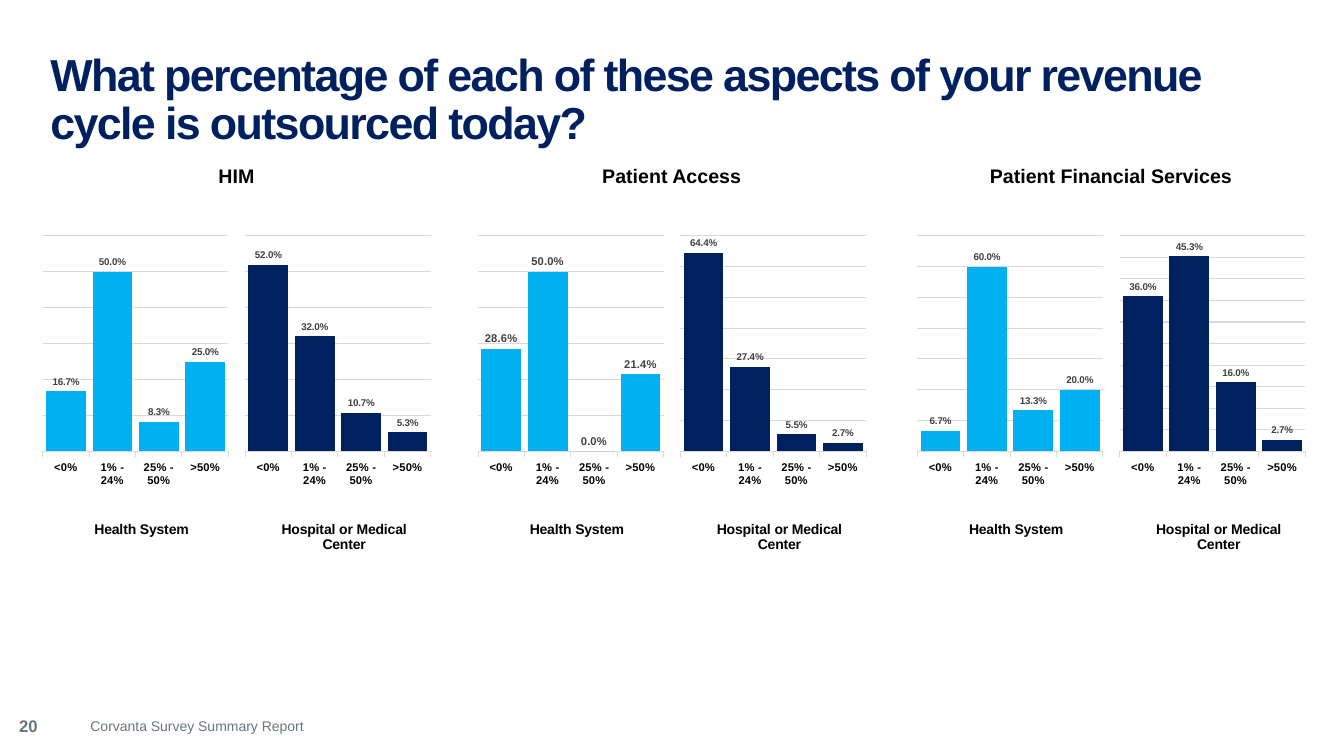
from lxml.etree import SubElement
from pptx import Presentation
from pptx.chart.data import CategoryChartData
from pptx.dml.color import RGBColor
from pptx.enum.chart import XL_CHART_TYPE as ChartType
from pptx.enum.chart import XL_LABEL_POSITION as LabelPos, XL_TICK_MARK as Tick
from pptx.enum.text import MSO_ANCHOR as Anchor, MSO_AUTO_SIZE as AutoSize, PP_ALIGN as Align
from pptx.oxml.ns import qn
from pptx.util import Cm, Pt

# Content
TITLE = "What percentage of each of these aspects of your revenue cycle is outsourced today?"
PAGE, FOOTER = "20", "Corvanta Survey Summary Report"
BANDS = ["<0%", "1% - 24%", "25% - 50%", ">50%"]

# Column pairs: title, bar colour, left edge of the axis title within the chart
KINDS = [("Health System", "sky", 0.27), ("Hospital or Medical Center", "navy", 0.19)]

# Each chart: values, axis maximum, gridline step, label size
GROUPS = [
    {"name": "HIM", "left": 1.02, "charts": [
        ([0.167, 0.5, 0.083, 0.25], 0.6, 0.1, 7),
        ([0.52, 0.32, 0.107, 0.053], 0.6, 0.1, 7)]},
    {"name": "Patient Access", "left": 11.99, "charts": [
        ([0.286, 0.5, 0, 0.214], 0.6, 0.1, 8),
        ([0.644, 0.274, 0.055, 0.027], 0.7, 0.1, 7)]},
    {"name": "Patient Financial Services", "left": 23.06, "charts": [
        ([0.067, 0.6, 0.133, 0.2], 0.7, 0.1, 7),
        ([0.36, 0.453, 0.16, 0.027], 0.5, 0.05, 7)]},
]
COLORS = {"navy": "002060", "sky": "00B0F0", "black": "000000",
          "label": "404040", "grid": "D9D9D9", "footer": "69767D"}
FONT = "Arial"

# Layout in centimetres
HEAD_TOP, HEAD_W, HEAD_H = 4.19, 9.88, 0.91
CHART_TOP, CHART_W, CHART_H, CHART_STEP = 5.26, 4.8, 11.2, 5.1
PLOT = {"x": 0.012, "y": 0.061, "w": 0.975, "h": 0.485}


def rgb(name):
    return RGBColor.from_string(COLORS[name])


def set_font(font, size, color, bold=False):
    font.name, font.size, font.bold = FONT, Pt(size), bold
    font.color.rgb = rgb(color)


def place(s, left, top, width, height):
    s.left, s.top, s.width, s.height = Cm(left), Cm(top), Cm(width), Cm(height)


def write(s, text, *, size, color, bold=True, align=Align.LEFT, anchor=Anchor.TOP,
          inset=True, line=None, spacing=None):
    tf = s.text_frame
    tf.word_wrap, tf.auto_size, tf.vertical_anchor = True, AutoSize.NONE, anchor
    if not inset:
        tf.margin_left = tf.margin_top = tf.margin_right = tf.margin_bottom = 0
    p = tf.paragraphs[0]
    p.alignment, p.line_spacing, p.space_before = align, line, Pt(0)
    r = p.add_run()
    r.text = text
    set_font(r.font, size, color, bold)
    if spacing is not None:
        r._r.get_or_add_rPr().set("spc", str(spacing))
    return p


def set_layout(layout, inner=False, **fractions):
    manual = SubElement(layout, qn("c:manualLayout"))
    if inner:
        SubElement(manual, qn("c:layoutTarget")).set("val", "inner")
    for side in "xy":
        SubElement(manual, qn(f"c:{side}Mode")).set("val", "edge")
    for side, value in fractions.items():
        SubElement(manual, qn(f"c:{side}")).set("val", str(value))


def add_bars(slide, left, values, top_value, step, label_size, kind):
    caption, color, caption_x = kind
    data = CategoryChartData(number_format="0.0%")
    data.categories = BANDS
    data.add_series("Series 1", values)
    chart = slide.shapes.add_chart(ChartType.COLUMN_CLUSTERED, Cm(left), Cm(CHART_TOP),
                                   Cm(CHART_W), Cm(CHART_H), data).chart
    chart.has_title = chart.has_legend = False
    set_font(chart.font, 10, "black")

    # Bars and value labels
    plot = chart.plots[0]
    plot.gap_width, plot.overlap, plot.vary_by_categories = 17, -27, False
    fill = plot.series[0].format.fill
    fill.solid()
    fill.fore_color.rgb = rgb(color)
    plot.has_data_labels = True
    labels = plot.data_labels
    labels.show_value, labels.position = True, LabelPos.OUTSIDE_END
    labels.number_format, labels.number_format_is_linked = "0.0%", False
    set_font(labels.font, label_size, "label", True)

    # Axes
    cat, val = chart.category_axis, chart.value_axis
    val.minimum_scale, val.maximum_scale, val.major_unit = 0, top_value, step
    val.visible = False
    cat.major_tick_mark = Tick.OUTSIDE
    set_font(cat.tick_labels.font, 8, "black", True)
    for line in (cat.format.line, val.major_gridlines.format.line):
        line.color.rgb, line.width = rgb("grid"), Pt(0.75)

    # Axis title and plot area
    title = cat.axis_title
    p = title.text_frame.paragraphs[0]
    r = p.add_run()
    r.text = caption
    set_font(r.font, 10, "black", True)
    set_layout(title._element.find(qn("c:layout")), x=caption_x, y=0.694)
    area = chart._chartSpace.chart.plotArea
    layout = area.find(qn("c:layout"))
    if layout is None:
        layout = SubElement(area, qn("c:layout"))
        area.insert(0, layout)
    set_layout(layout, inner=True, **PLOT)


def main():
    prs = Presentation()
    prs.slide_width, prs.slide_height = Cm(33.87), Cm(19.05)
    slide = prs.slides.add_slide(prs.slide_layouts[1])
    title, body = slide.placeholders

    # Title
    place(title, 1.27, 1.27, 31.24, 2.54)
    write(title, TITLE, size=32, color="navy", anchor=Anchor.MIDDLE, inset=False,
          line=0.9, spacing=-120)

    # Headings and chart pairs
    for i, group in enumerate(GROUPS):
        s = body if i == 0 else slide.shapes.add_textbox(0, 0, 0, 0)
        place(s, group["left"], HEAD_TOP, HEAD_W, HEAD_H)
        p = write(s, group["name"], size=14, color="black", align=Align.CENTER,
                  inset=False, line=0.9)
        if s is body:
            pPr = p._p.get_or_add_pPr()
            pPr.set("marL", "0")
            pPr.set("indent", "0")
            SubElement(pPr, qn("a:buNone"))
        for j, (spec_row, kind) in enumerate(zip(group["charts"], KINDS)):
            add_bars(slide, group["left"] + j * CHART_STEP, *spec_row, kind)

    # Page number and footer
    s = slide.shapes.add_textbox(Cm(0.23), Cm(17.91), Cm(1.14), Cm(0.76))
    write(s, PAGE, size=12, color="footer")
    s = slide.shapes.add_textbox(Cm(2.03), Cm(17.96), Cm(24.77), Cm(0.69))
    write(s, FOOTER, size=10, color="footer", bold=False)

    prs.save("out.pptx")


if __name__ == "__main__":
    main()
